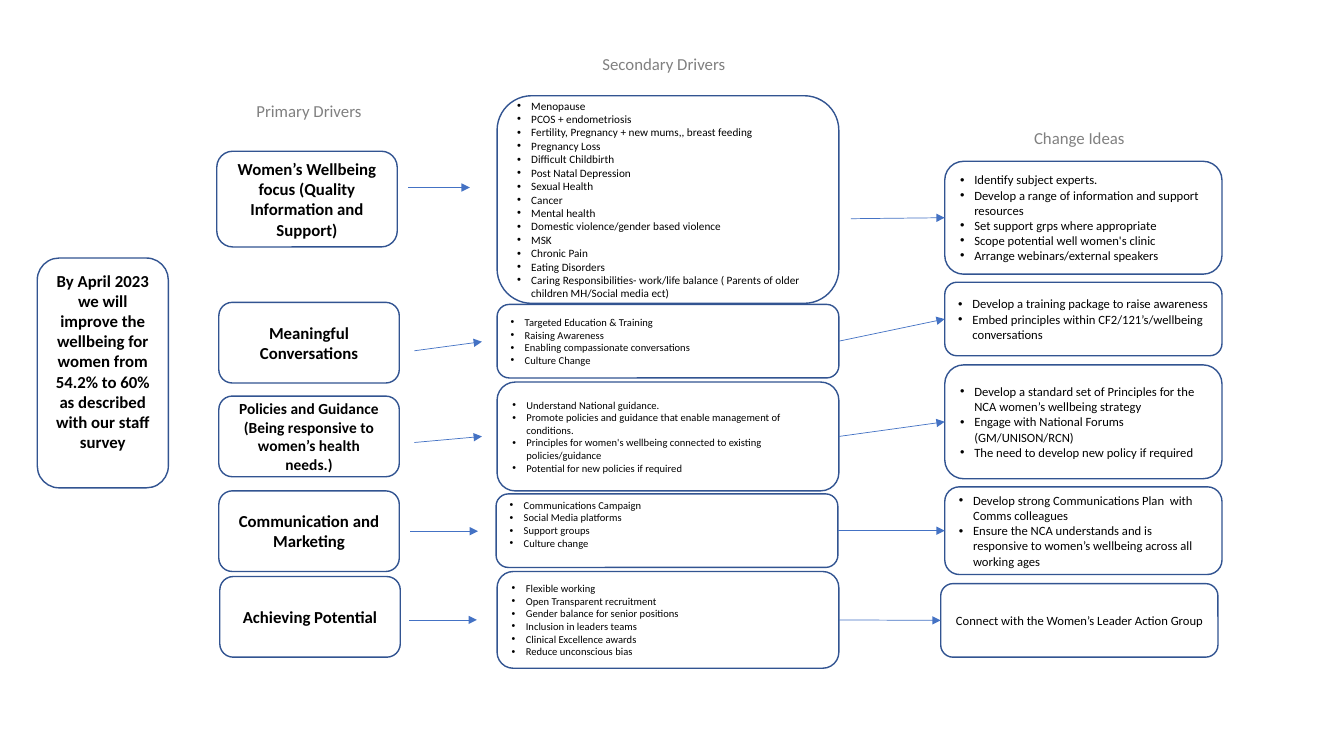
from dataclasses import dataclass

from lxml.etree import SubElement
from pptx import Presentation
from pptx.dml.color import RGBColor
from pptx.enum.shapes import MSO_CONNECTOR, MSO_SHAPE
from pptx.enum.text import MSO_ANCHOR, PP_ALIGN
from pptx.oxml.ns import qn
from pptx.util import Emu, Pt


@dataclass(frozen=True)
class Theme:
    font: str = "Calibri"
    ink: str = "000000"
    heading: str = "808080"
    outline: str = "325491"
    arrow: str = "4472C4"
    driver_size: float = 12
    dense_driver_size: float = 11
    idea_size: float = 9
    long_list_size: float = 8
    list_size: float = 7.5


T = Theme()
LEFT, RIGHT = 1, 3  # connection sites


def px(n):
    return Emu(n * 9144)


# Text and shape helpers
def add_bullet(p):
    pPr = p._p.get_or_add_pPr()
    pPr.set("marL", str(px(14)))
    pPr.set("indent", str(px(-14)))
    SubElement(pPr, qn("a:buFont")).set("typeface", "Arial")
    SubElement(pPr, qn("a:buChar")).set("char", "•")


def write(tf, lines, *, size, color=T.ink, bold=False, bullets=False, anchor=MSO_ANCHOR.MIDDLE):
    tf.word_wrap = True
    tf.vertical_anchor = anchor
    for i, line in enumerate(lines):
        p = tf.paragraphs[0] if i == 0 else tf.add_paragraph()
        p.alignment = PP_ALIGN.LEFT if bullets else PP_ALIGN.CENTER
        if bullets:
            add_bullet(p)
        r = p.add_run()
        r.text = line
        r.font.name, r.font.size, r.font.bold = T.font, Pt(size), bold
        r.font.color.rgb = RGBColor.from_string(color)


def card(s, box, lines, lift=0, **fmt):
    sp = s.shapes.add_shape(MSO_SHAPE.ROUNDED_RECTANGLE, *map(px, box))
    sp.shadow.inherit = False
    sp.fill.background()
    sp.line.color.rgb = RGBColor.from_string(T.outline)
    sp.line.width = Pt(1)
    write(sp.text_frame, lines, **fmt)
    sp.text_frame.margin_bottom = px(5 + lift)
    return sp


def arrow(s, start, end, source=None, target=None):
    c = s.shapes.add_connector(MSO_CONNECTOR.STRAIGHT, *map(px, start + end))
    if source is not None:
        c.begin_connect(source, RIGHT)
    if target is not None:
        c.end_connect(target, LEFT)
    c.line.color.rgb = RGBColor.from_string(T.arrow)
    c.line.width = Pt(0.5)
    SubElement(c.line._get_or_add_ln(), qn("a:tailEnd")).set("type", "triangle")
    SubElement(c._element.spPr, qn("a:effectLst"))


# One column: heading on top, cards at (dx, dy, height) from the column's corner
def column(s, box, heading, heading_dx, heading_w, cards, **common):
    x, y, w, _ = box
    tb = s.shapes.add_textbox(*map(px, (x + heading_dx, y, heading_w, 30)))
    write(tb.text_frame, [heading], size=T.driver_size, color=T.heading, anchor=MSO_ANCHOR.TOP)
    return [card(s, (x + dx, y + dy, w, h), lines, **{**common, **own})
            for (dx, dy, h), lines, own in cards]


# Arrows from primary drivers stop short of the secondary cards
def primary_arrows(s, box):
    x, y, _, _ = box
    for x1, y1, x2, y2 in [(0, 0, 61, 0), (6, 162, 73, 153), (6, 253, 73, 247),
                           (2, 341, 69, 341), (1, 429, 68, 429)]:
        arrow(s, (x + x1, y + y1), (x + x2, y + y2))


# Arrows from secondary drivers to change ideas; the first starts off its card
def change_arrows(s, box, sources, targets):
    x, y, w, _ = box
    for i, (source, target) in enumerate(zip(sources, targets)):
        arrow(s, (x, y), (x + w, y), source if i else None, target)


AIM = ["By April 2023 we will improve the wellbeing for women from "
       "54.2% to 60% as described with our staff survey"]

PRIMARY = [
    ((-2, 55, 95), ["Women’s Wellbeing focus (Quality Information and Support)"], {}),
    ((0, 205, 80), ["Meaningful Conversations"], {}),
    ((0, 298, 80), ["Policies and Guidance (Being responsive to women’s health needs.)"],
     {"size": T.dense_driver_size}),
    ((0, 392, 80), ["Communication and Marketing"], {}),
    ((1, 477, 80), ["Achieving Potential"], {}),
]

SECONDARY = [
    ((0, 47, 206), [
        "Menopause", "PCOS + endometriosis",
        "Fertility, Pregnancy + new mums,, breast feeding", "Pregnancy Loss",
        "Difficult Childbirth", "Post Natal Depression", "Sexual Health", "Cancer",
        "Mental health", "Domestic violence/gender based violence", "MSK", "Chronic Pain",
        "Eating Disorders",
        "Caring Responsibilities- work/life balance ( Parents of older children "
        "MH/Social media ect)"], {"size": T.long_list_size}),
    ((0, 254, 73), ["Targeted Education & Training", "Raising Awareness",
                    "Enabling compassionate conversations", "Culture Change"], {}),
    ((0, 331, 108), [
        "Understand National guidance.",
        "Promote policies and guidance that enable management of conditions.",
        "Principles for women's wellbeing connected to existing policies/guidance",
        "Potential for new policies if required"], {}),
    ((-1, 442, 73), ["Communications Campaign", "Social Media platforms",
                     "Support groups", "Culture change"], {"lift": 13}),
    ((0, 519, 96), ["Flexible working", "Open Transparent recruitment",
                    "Gender balance for senior positions", "Inclusion in leaders teams",
                    "Clinical Excellence awards", "Reduce unconscious bias"], {}),
]

CHANGE = [
    ((0, 38, 112), ["Identify subject experts.",
                    "Develop a range of information and support resources",
                    "Set support grps where appropriate",
                    "Scope potential well women's clinic",
                    "Arrange webinars/external speakers"], {}),
    ((0, 158, 73), ["Develop a training package to raise awareness",
                    "Embed principles within CF2/121’s/wellbeing conversations"], {}),
    ((0, 240, 113), ["Develop a standard set of Principles for the NCA women’s wellbeing strategy",
                     "Engage with National Forums (GM/UNISON/RCN)",
                     "The need to develop new policy if required"], {}),
    ((0, 361, 87), ["Develop strong Communications Plan  with Comms colleagues",
                    "Ensure the NCA understands and is responsive to women’s wellbeing "
                    "across all working ages"], {}),
    ((-4, 457, 73), ["Connect with the Women’s Leader Action Group"], {"bullets": False}),
]


def driver_diagram(prs):
    s = prs.slides.add_slide(prs.slide_layouts[6])
    card(s, (37, 256, 130, 228), AIM, lift=23, size=T.driver_size, bold=True)
    column(s, (217, 95, 179, 557), "Primary Drivers", 21, 137, PRIMARY,
           size=T.driver_size, bold=True)
    secondary = column(s, (493, 48, 339, 615), "Secondary Drivers", 92, 147, SECONDARY,
                       size=T.list_size, bullets=True)
    change = column(s, (937, 122, 275, 530), "Change Ideas", 73, 121, CHANGE,
                    size=T.idea_size, bullets=True)
    primary_arrows(s, (405, 186, 73, 429))
    change_arrows(s, (844, 217, 93, 398), secondary, change)


def main():
    prs = Presentation()
    prs.slide_width, prs.slide_height = px(1333), px(750)
    driver_diagram(prs)
    prs.save("out.pptx")


if __name__ == "__main__":
    main()
